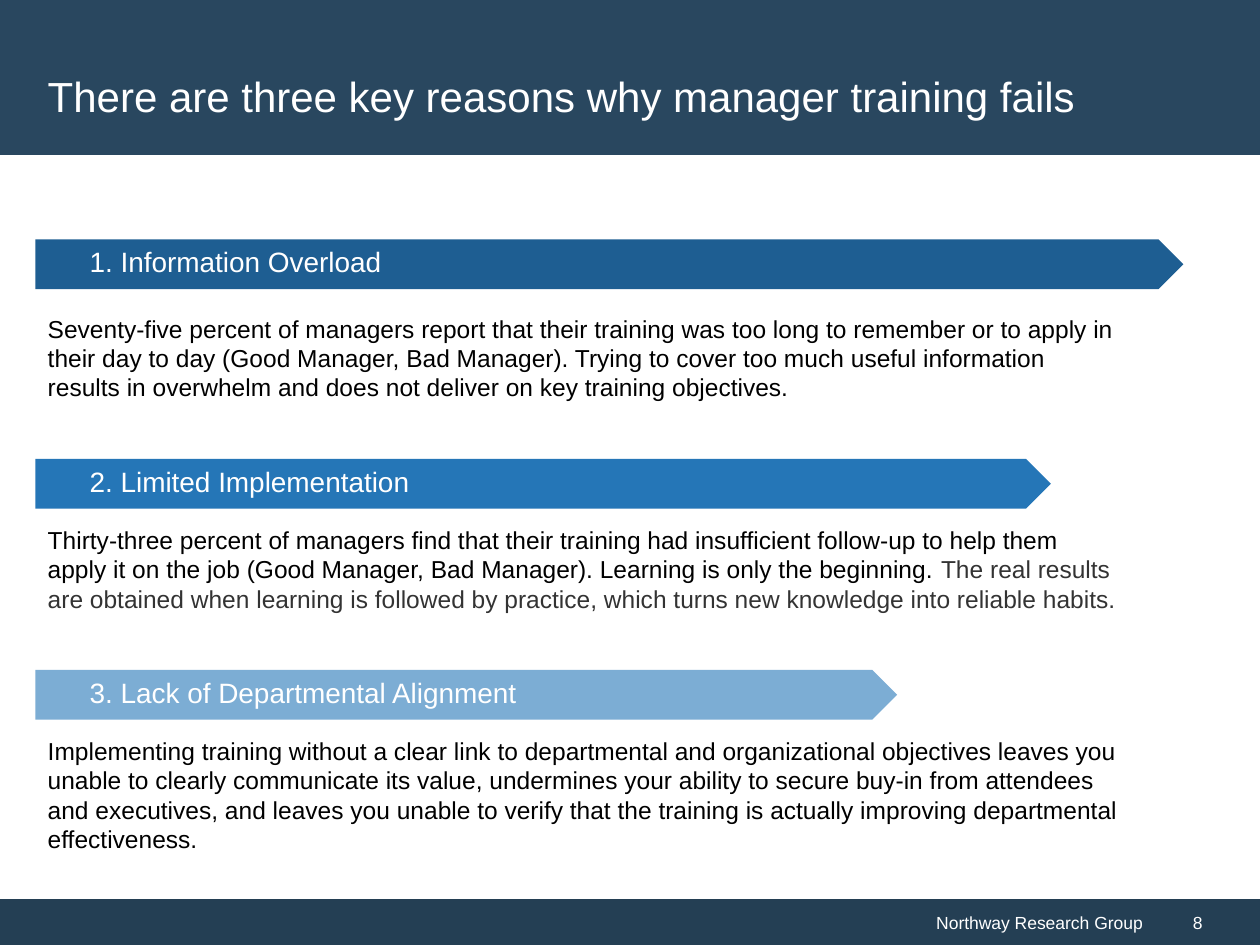
from pptx import Presentation
from pptx.dml.color import RGBColor
from pptx.enum.shapes import MSO_SHAPE as Shape
from pptx.enum.text import MSO_ANCHOR as Anchor, PP_ALIGN as Align
from pptx.util import Pt

WHITE = RGBColor(0xFF, 0xFF, 0xFF)
BLACK = RGBColor(0x00, 0x00, 0x00)
CHARCOAL = RGBColor(0x33, 0x33, 0x33)
HEADER = RGBColor(0x29, 0x47, 0x5F)
FOOTER = RGBColor(0x24, 0x3F, 0x54)
DARK_BLUE = RGBColor(0x1E, 0x5E, 0x92)
MID_BLUE = RGBColor(0x25, 0x76, 0xB7)
LIGHT_BLUE = RGBColor(0x7C, 0xAD, 0xD4)

TITLE = "There are three key reasons why manager training fails"
PUBLISHER = "Northway Research Group"
PAGE_NUMBER = "8"
REASONS = [
    {"heading": "1. Information Overload", "color": DARK_BLUE,
     "top": 136.8, "width": 656, "text_top": 175.7, "text_height": 58.3,
     "body": [("Seventy-five percent of managers report that their training was too long "
               "to remember or to apply in their day to day (Good Manager, Bad Manager). "
               "Trying to cover too much useful information results in overwhelm and does "
               "not deliver on key training objectives.", BLACK)]},
    {"heading": "2. Limited Implementation", "color": MID_BLUE,
     "top": 262.3, "width": 580.3, "text_top": 296.4, "text_height": 58.3,
     "body": [("Thirty-three percent of managers find that their training had insufficient "
               "follow-up to help them apply it on the job (Good Manager, Bad Manager). "
               "Learning is only the beginning. ", BLACK),
              ("The real results are obtained when learning is followed by practice, "
               "which turns new knowledge into reliable habits.", CHARCOAL)]},
    {"heading": "3. Lack of Departmental Alignment", "color": LIGHT_BLUE,
     "top": 382.8, "width": 492.5, "text_top": 416.9, "text_height": 74.9,
     "body": [("Implementing training without a clear link to departmental and "
               "organizational objectives leaves you unable to clearly communicate its "
               "value, undermines your ability to secure buy-in from attendees and "
               "executives, and leaves you unable to verify that the training is actually "
               "improving departmental effectiveness.", BLACK)]},
]

WIDTH, HEIGHT = 720, 540
LEFT = 20.2
BANNER_HEIGHT = 28.4
BODY_WIDTH = 626.4
HEADER_HEIGHT = 88.6
FOOTER_TOP, PAGE_LEFT = 513.8, 660


def apply(target, values):
    for name, value in values.items():
        setattr(target, name, value)


def write(box, spans, size, frame_format=None, para_format=None):
    frame = box.text_frame
    apply(frame, {"word_wrap": True, **(frame_format or {})})
    para = frame.paragraphs[0]
    apply(para, {"alignment": Align.LEFT, **(para_format or {})})
    for text, color in spans:
        span = para.add_run()
        span.text = text
        apply(span.font, {"name": "Arial", "size": Pt(size)})
        span.font.color.rgb = color


def add_block(page, kind, left, top, width, height, color):
    block = page.shapes.add_shape(kind, Pt(left), Pt(top), Pt(width), Pt(height))
    block.shadow.inherit = False
    block.fill.solid()
    block.fill.fore_color.rgb = color
    block.line.fill.background()
    return block


def add_text(page, left, top, width, height):
    return page.shapes.add_textbox(Pt(left), Pt(top), Pt(width), Pt(height))


def main():
    deck = Presentation()
    apply(deck, {"slide_width": Pt(WIDTH), "slide_height": Pt(HEIGHT)})
    page = deck.slides.add_slide(deck.slide_layouts[6])
    middle = {"vertical_anchor": Anchor.MIDDLE}

    footer_height = HEIGHT - FOOTER_TOP
    publisher = add_block(page, Shape.RECTANGLE, 0, FOOTER_TOP, PAGE_LEFT, footer_height, FOOTER)
    write(publisher, [(PUBLISHER, WHITE)], 10, middle, {"alignment": Align.RIGHT})
    number = add_block(page, Shape.RECTANGLE, PAGE_LEFT, FOOTER_TOP, WIDTH - PAGE_LEFT,
                       footer_height, FOOTER)
    write(number, [(PAGE_NUMBER, WHITE)], 10, {**middle, "margin_left": Pt(21.6)})

    add_block(page, Shape.RECTANGLE, 0, 0, WIDTH, HEADER_HEIGHT, HEADER)
    title = add_text(page, LEFT, LEFT, 679, 69.1)
    write(title, [(TITLE, WHITE)], 24, middle)

    banner_frame = {**middle, "margin_left": Pt(31), "margin_top": 0,
                    "margin_right": 0, "margin_bottom": 0}
    for reason in REASONS:
        banner = add_block(page, Shape.PENTAGON, LEFT, reason["top"], reason["width"],
                           BANNER_HEIGHT, reason["color"])
        write(banner, [(reason["heading"], WHITE)], 16, banner_frame, {"line_spacing": Pt(16)})
        body = add_text(page, LEFT, reason["text_top"], BODY_WIDTH, reason["text_height"])
        write(body, reason["body"], 14)

    deck.save("out.pptx")


if __name__ == "__main__":
    main()
